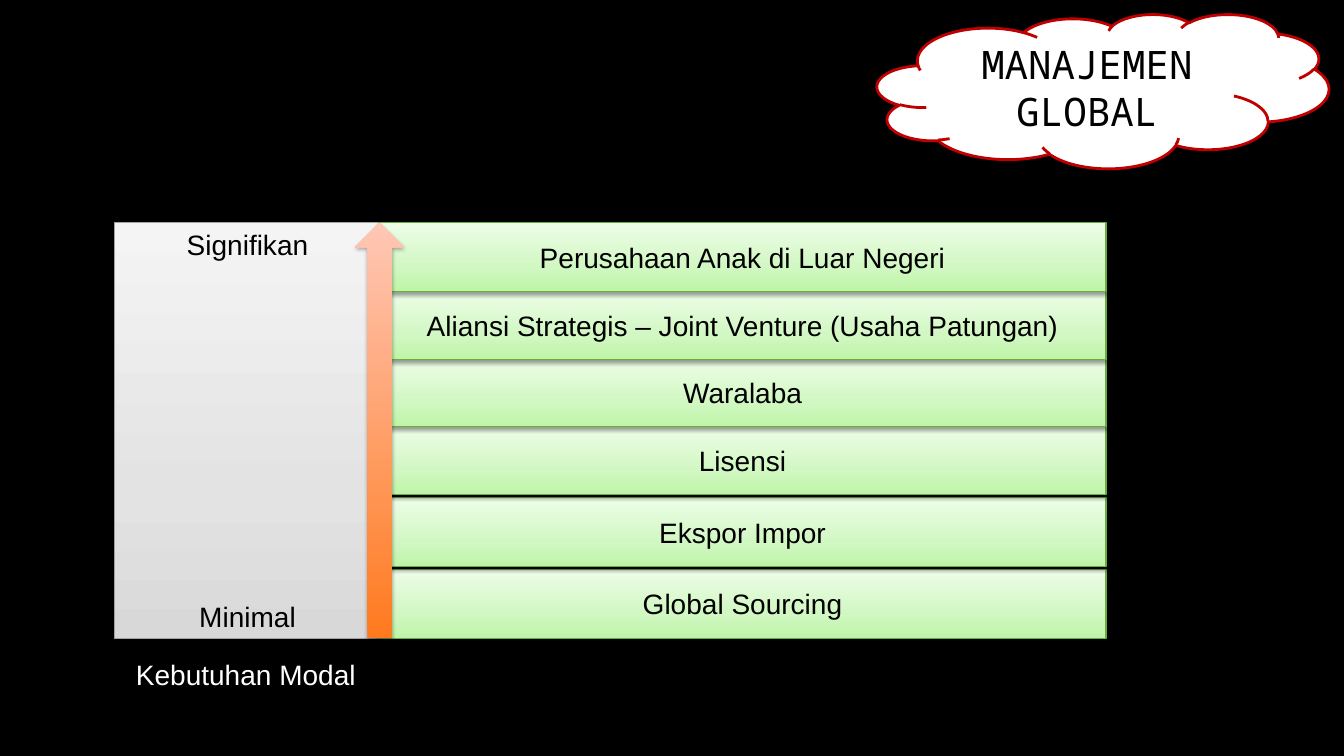
from lxml import etree
from pptx import Presentation
from pptx import util as u
from pptx.dml.color import RGBColor
from pptx.enum import shapes, text
from pptx.oxml import ns

BLACK = RGBColor(0x00, 0x00, 0x00)
WHITE = RGBColor(0xFF, 0xFF, 0xFF)
RED = RGBColor(0xC0, 0x00, 0x00)
GREY_LINE = RGBColor(0xA1, 0xA1, 0xA1)
GREEN_LINE = RGBColor(0x6D, 0xAC, 0x43)
GREYS = {0: RGBColor(0xD8, 0xD8, 0xD8), 35: RGBColor(0xE3, 0xE3, 0xE3), 100: RGBColor(0xF4, 0xF4, 0xF4)}
GREENS = {0: RGBColor(0xBE, 0xF5, 0xA7), 35: RGBColor(0xD1, 0xF7, 0xC2), 100: RGBColor(0xED, 0xFD, 0xE7)}
ORANGES = {0: RGBColor(0xFF, 0x7A, 0x1F), 100: RGBColor(0xFF, 0xC7, 0xB6)}

STRATEGIES = {
    "Global Sourcing": 5.65,
    "Ekspor Impor": 4.94,
    "Lisensi": 4.23,
    "Waralaba": 3.55,
    "Aliansi Strategis – Joint Venture (Usaha Patungan)": 2.89,
    "Perusahaan Anak di Luar Negeri": 2.21,
}


def add_child(parent, tag, **attributes):
    """Append a drawing element with the given attributes."""
    child = etree.SubElement(parent, ns.qn(tag))
    for name, value in attributes.items():
        child.set(name, str(value))
    return child


def add_color(parent, color, **attributes):
    """Append an RGB colour element."""
    return add_child(parent, "a:srgbClr", val=color, **attributes)


def shade(shape, stops):
    """Fill a shape with a gradient rising from its bottom edge."""
    shape.fill.gradient()
    shape.fill.gradient_angle = 90
    stop_list = shape._element.spPr.find(".//" + ns.qn("a:gsLst"))
    for stop in list(stop_list):
        stop_list.remove(stop)
    for percent, color in stops.items():
        add_color(add_child(stop_list, "a:gs", pos=percent * 1000), color)


def cast_shadow(shape, opacity, distance):
    """Give a shape a soft shadow below it."""
    effects = shape._element.spPr.find(ns.qn("a:effectLst"))
    shadow = add_child(effects, "a:outerShdw", blurRad=u.Pt(3.1), dist=u.Pt(distance),
                       dir=5400000, rotWithShape=0)
    add_child(add_color(shadow, BLACK), "a:alpha", val=opacity * 1000)


def write(shape, lines, size=20, font="Arial", color=BLACK, align=text.PP_ALIGN.CENTER, gap=0):
    """Write paragraphs in a shape, with a gap between them."""
    frame = shape.text_frame
    for index, line in enumerate(lines):
        paragraph = frame.add_paragraph() if index else frame.paragraphs[0]
        paragraph.text = line
        paragraph.alignment = align
        if index:
            paragraph.space_before = u.Pt(gap)
        formats = {"size": u.Pt(size), "name": font}
        for name, value in formats.items():
            setattr(paragraph.runs[0].font, name, value)
        paragraph.runs[0].font.color.rgb = color


def add_outline(slide, kind, box, line=None, width=0.75):
    """Add a preset shape with a plain border or none."""
    shape = slide.shapes.add_shape(kind, *map(u.Inches, box))
    shape.shadow.inherit = False
    if line is None:
        shape.line.fill.background()
    else:
        shape.line.color.rgb = line
        shape.line.width = u.Pt(width)
    shape.text_frame.vertical_anchor = text.MSO_ANCHOR.MIDDLE
    return shape


def add_panel(slide, box, stops, line, lines, gap=0):
    """Add a shaded rectangle with text and a shadow."""
    panel = add_outline(slide, shapes.MSO_SHAPE.RECTANGLE, box, line)
    shade(panel, stops)
    cast_shadow(panel, 38, 1.6)
    write(panel, lines, gap=gap)


def add_title_cloud(slide):
    """Add the cloud that holds the title."""
    cloud = add_outline(slide, shapes.MSO_SHAPE.CLOUD, (8.7, 0.14, 4.48, 1.53), RED, 2)
    cloud.fill.solid()
    cloud.fill.fore_color.rgb = WHITE
    write(cloud, ["MANAJEMEN GLOBAL"], size=28, font="Noto Sans Mono")


def add_caption(slide):
    """Add the label under the capital scale."""
    caption = slide.shapes.add_textbox(*map(u.Inches, (1.25, 6.47, 2.4, 0.44)))
    caption.text_frame.word_wrap = False
    caption.text_frame.auto_size = text.MSO_AUTO_SIZE.SHAPE_TO_FIT_TEXT
    write(caption, ["Kebutuhan Modal"], color=WHITE, align=text.PP_ALIGN.LEFT)


def add_capital_arrow(slide):
    """Add the arrow pointing to greater capital needs."""
    arrow = add_outline(slide, shapes.MSO_SHAPE.UP_ARROW, (3.52, 2.21, 0.49, 4.12))
    shade(arrow, ORANGES)
    cast_shadow(arrow, 35, 1.8)


def main():
    """Build the slide and save it."""
    deck = Presentation()
    deck.slide_width, deck.slide_height = u.Inches(13.33), u.Inches(7.5)
    slide = deck.slides.add_slide(deck.slide_layouts[6])
    slide.background.fill.solid()
    slide.background.fill.fore_color.rgb = BLACK
    add_title_cloud(slide)
    add_panel(slide, (1.14, 2.21, 2.63, 4.12), GREYS, GREY_LINE, ["Signifikan", "Minimal"], gap=242)
    for strategy, top in STRATEGIES.items():
        add_panel(slide, (3.76, top, 7.21, 0.68), GREENS, GREEN_LINE, [strategy])
    add_caption(slide)
    add_capital_arrow(slide)
    deck.save("out.pptx")


if __name__ == "__main__":
    main()
